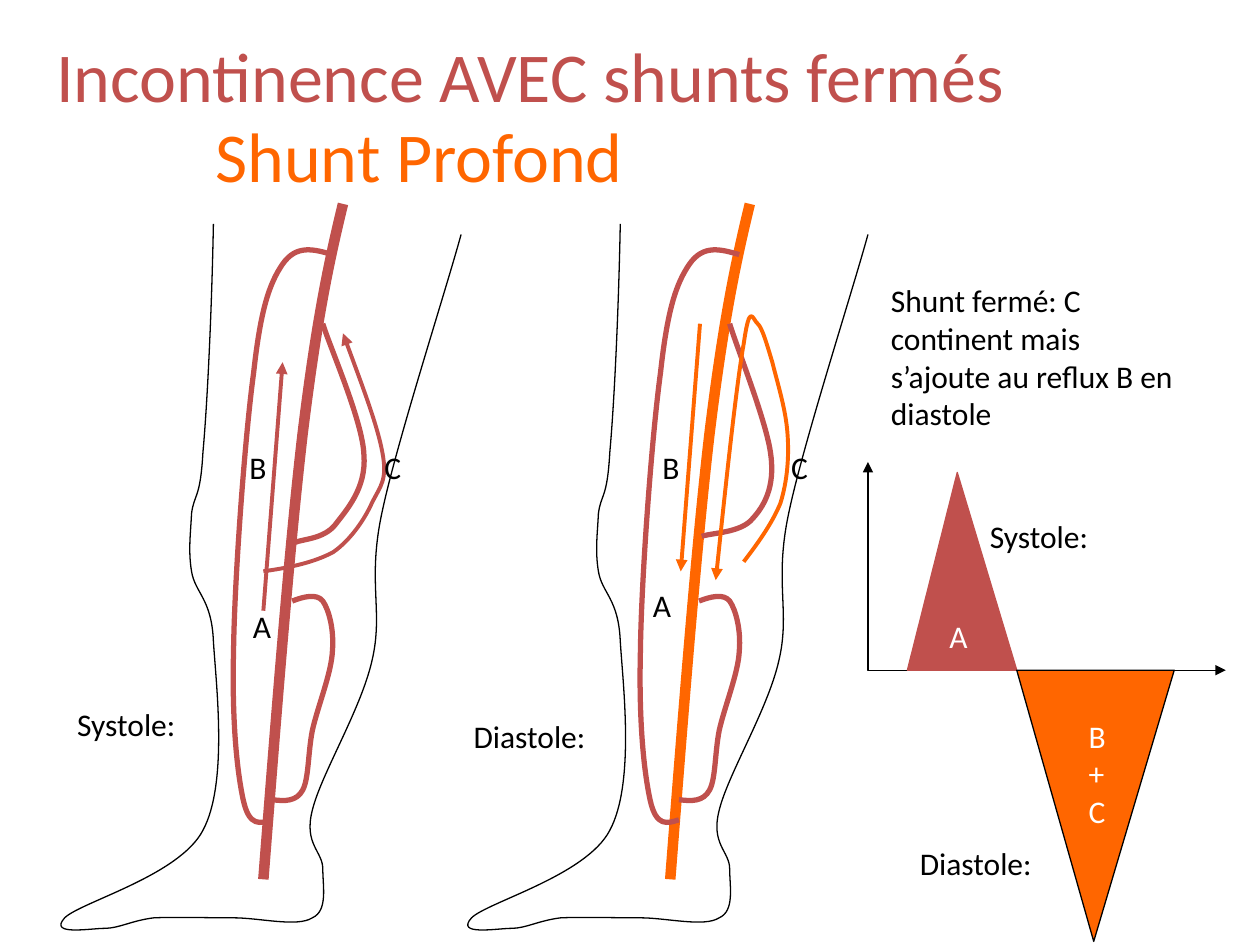
from lxml.etree import SubElement
from pptx import Presentation
from pptx.dml.color import RGBColor
from pptx.enum.shapes import MSO_CONNECTOR as Connector
from pptx.oxml.ns import qn
from pptx.util import Pt

BLACK = RGBColor(0x00, 0x00, 0x00)
WHITE = RGBColor(0xFF, 0xFF, 0xFF)
RED = RGBColor(0xC0, 0x50, 0x4D)
ORANGE = RGBColor(0xFF, 0x66, 0x00)

OUTLINE = [
    (94.5, 11.5), (93.5, 62.5), (91, 114.5), (88.5, 142), (87, 169),
    (83.5, 165.5), (82, 177), (81.5, 188), (80, 198), (82, 210),
    (84, 222.5), (93.5, 225.5), (94.5, 250), (96, 274.5), (103, 331),
    (88.5, 358), (75, 384), (18.5, 399), (9.5, 408), (0, 418.5),
    (24, 414), (32.5, 414), (40.5, 414), (48, 409.5), (60.5, 408),
    (72.5, 407.5), (90.5, 408), (106, 408), (121, 408), (142.5, 413.5),
    (151, 408), (160, 404), (157, 390), (157, 380), (157, 370),
    (146, 366), (151, 346.5), (156, 326), (178.5, 289.5), (185, 261.5),
    (192, 232.5), (182, 216.5), (191, 175.5), (199.5, 135.5),
    (227, 50.5), (236, 17.5),
]
DEEP_VEIN = [
    (168.5, 0), (160.5, 33), (153.5, 66), (145.5, 131), (138, 195),
    (130.5, 290), (123, 386),
]
LONG_BRANCH = [
    (162.5, 29), (152, 26), (142, 23), (134, 34.5), (126.5, 45.5),
    (121.5, 60), (117.5, 96.5), (112.5, 133), (106.5, 214.5),
    (106, 255.5), (105, 296), (108, 324), (111.5, 340.5), (115, 356.5),
    (121.5, 354), (128, 352),
]
CALF_BRANCH = [
    (139.5, 227), (146, 224.5), (153.5, 222.5), (157, 227), (160.5, 232),
    (163.5, 243.5), (162.5, 255.5), (162, 268), (154, 287.5), (151, 301),
    (148.5, 314), (149, 328.5), (145.5, 335), (142, 341.5),
    (135.5, 341.5), (128, 340.5),
]
SYSTOLE_THIGH = [
    (157, 68.5), (160.5, 80.5), (180, 124.5), (180.5, 143.5), (182, 162.5),
    (170.5, 175), (164, 183.5), (157.5, 191.5), (146, 191.5), (141, 193.5),
]
DIASTOLE_THIGH = [
    (157, 68.5), (160.5, 80.5), (178.5, 125.5), (180.5, 143.5), (183, 162),
    (176.5, 173), (170, 180), (163.5, 188), (147, 188), (141, 190),
]
SYSTOLE_FLOW = [
    (123, 210), (137.5, 208), (152, 205), (163, 199), (173, 192),
    (181, 180), (185, 171), (190, 161), (194, 158), (191, 142),
    (188, 126), (178, 100), (168.5, 74),
]
DIASTOLE_FLOW = [
    (165, 204.5), (173, 194), (181, 183), (186, 171), (190, 158),
    (191, 144), (190, 131), (189, 117), (184, 101.5), (181.5, 91),
    (178.5, 81), (175.5, 70.5), (173, 68.5), (170, 66), (168.5, 55.5),
    (165, 80), (160.5, 104.5), (152, 187), (149, 215),
]


def add_text(s, x, y, w, h, text, color=BLACK, size=18):
    tf = s.shapes.add_textbox(Pt(x), Pt(y), Pt(w), Pt(h)).text_frame
    tf.word_wrap = True
    p = tf.paragraphs[0]
    p.text = text
    p.font.name = "Calibri"
    p.font.size = Pt(size)
    p.font.color.rgb = color


def style_line(sp, color, width, ends=()):
    sp.line.color.rgb = color
    sp.line.width = Pt(width)
    ln = sp.line._get_or_add_ln()
    for end in ends:
        SubElement(ln, qn(f"a:{end}"), type="triangle")


def add_outline(s, box, points, color, width, fill=None, ends=(), close=False):
    left, top = box
    spots = [(Pt(left + x), Pt(top + y)) for x, y in points]
    builder = s.shapes.build_freeform(*spots[0])
    builder.add_line_segments(spots[1:], close=close)
    sp = builder.convert_to_shape()
    sp.shadow.inherit = False
    if fill is None:
        sp.fill.background()
    else:
        sp.fill.solid()
        sp.fill.fore_color.rgb = fill
    style_line(sp, color, width, ends)
    return sp


def add_curve(s, box, points, color, width, ends=()):
    sp = add_outline(s, box, points, color, width, ends=ends)
    geom = next(sp._element.iter(qn("a:path")))
    steps = geom.findall(qn("a:lnTo"))
    for i in range(0, len(steps), 3):
        bezier = SubElement(geom, qn("a:cubicBezTo"))
        for step in steps[i:i + 3]:
            bezier.append(step[0])
            geom.remove(step)


def add_arrow(s, box, start, end, color):
    left, top = box
    sp = s.shapes.add_connector(
        Connector.STRAIGHT, Pt(left + start[0]), Pt(top + start[1]),
        Pt(left + end[0]), Pt(top + end[1]))
    style_line(sp, color, 2.25, ["tailEnd"])
    SubElement(sp._element.spPr, qn("a:effectLst"))


def add_leg(s, box, color, thigh, flow, arrow, labels, phase):
    left, top = box
    add_curve(s, box, OUTLINE, BLACK, 0.75)
    add_curve(s, box, DEEP_VEIN, color, 6)
    for branch in (LONG_BRANCH, CALF_BRANCH, thigh):
        add_curve(s, box, branch, RED, 3)
    add_curve(s, box, flow, color, 2.25, ["tailEnd"])
    add_arrow(s, box, *arrow, color)
    for letter, (x, y) in labels.items():
        add_text(s, left + x, top + y, 28, 29, letter)
    text, x, y = phase
    add_text(s, left + x, top + y, 170, 29, text)


def add_flow_graph(s, box):
    left, top = box
    base = 119
    add_outline(s, box, [(0, 0), (0, base), (204.5, base)], BLACK, 0.75,
                ends=["headEnd", "tailEnd"])
    add_outline(s, box, [(22.5, base), (51, 6), (85, base)], RED, 0.75,
                fill=RED, close=True)
    add_outline(s, box, [(85, base), (129, 274), (175, base)], BLACK, 0.75,
                fill=ORANGE, close=True)
    add_text(s, left + 62.5, top + 28, 170, 29, "Systole:")
    add_text(s, left + 22.5, top + 215, 170, 29, "Diastole:")
    add_text(s, left + 39.5, top + 85, 28, 29, "A", WHITE)
    add_text(s, left + 119, top + 142, 28, 72, "B+C", WHITE)


def add_title(s, box):
    left, top = box
    add_text(s, left, top, 686, 60, "Incontinence AVEC shunts fermés", RED, 40)
    add_text(s, left + 91, top + 45.5, 595, 60, "Shunt Profond", ORANGE, 40)


def main():
    prs = Presentation()
    prs.slide_width, prs.slide_height = Pt(720), Pt(540)
    s = prs.slides.add_slide(prs.slide_layouts[6])
    add_title(s, (25, 15))
    add_leg(s, (27.5, 116.5), RED, SYSTOLE_THIGH, SYSTOLE_FLOW,
            ((123, 232.5), (134, 90.5)),
            {"A": (110, 227), "B": (108, 136), "C": (185, 136)},
            ("Systole:", 9.5, 283))
    add_leg(s, (260, 116.5), ORANGE, DIASTOLE_THIGH, DIASTOLE_FLOW,
            ((140, 68.5), (129, 210)),
            {"A": (106, 215), "B": (111.5, 136), "C": (185, 136)},
            ("Diastole:", 3.5, 289.5))
    add_flow_graph(s, (496, 264))
    add_text(s, 502, 157, 175.5, 94,
             "Shunt fermé: C continent mais s’ajoute au reflux B en diastole")
    prs.save("out.pptx")


if __name__ == "__main__":
    main()
